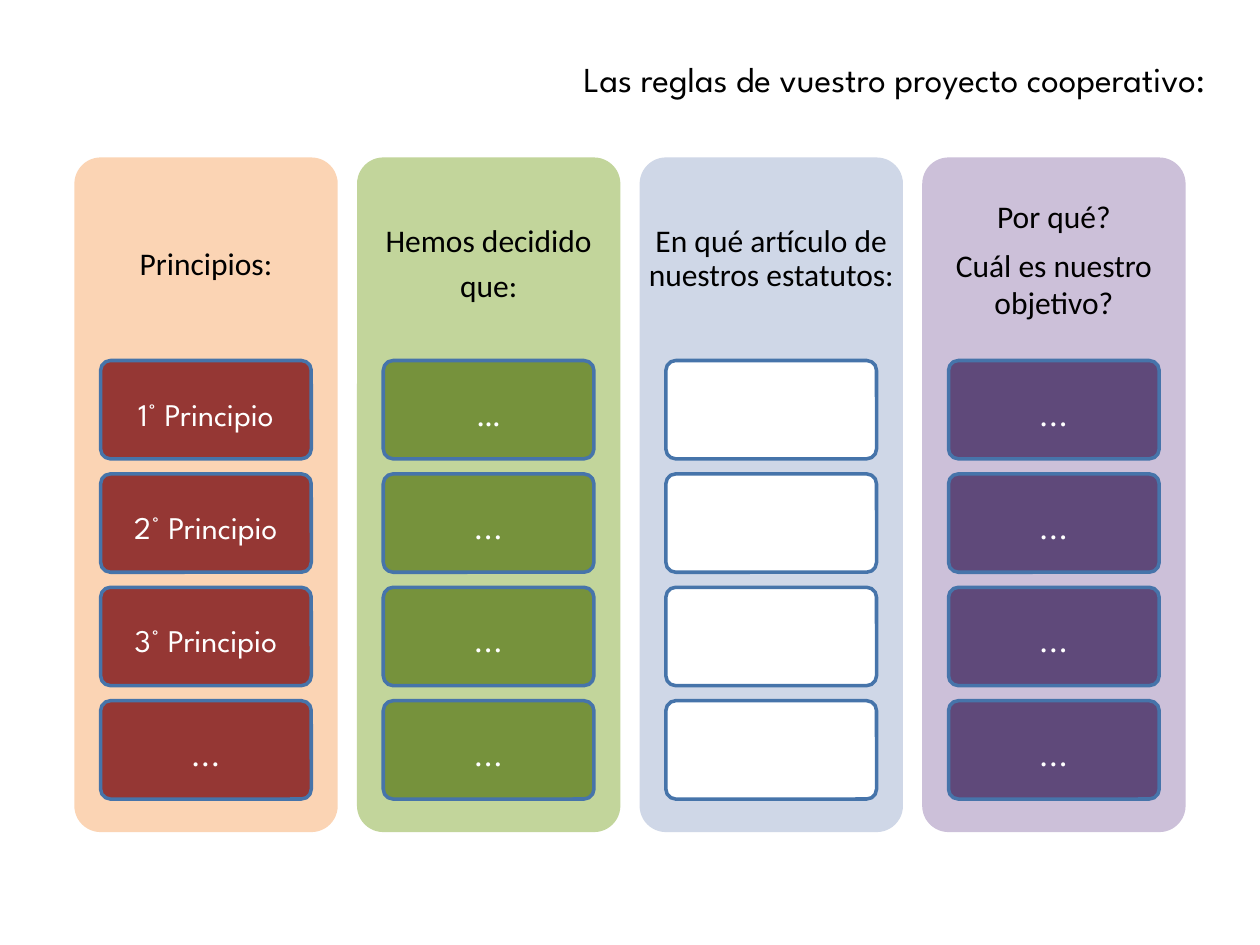
"""Build the slide with the rules of the cooperative project in four columns."""
from pptx import Presentation
from pptx.dml.color import RGBColor
from pptx.enum.shapes import MSO_SHAPE
from pptx.enum.text import MSO_ANCHOR, PP_ALIGN
from pptx.util import Pt

ROUNDED = MSO_SHAPE.ROUNDED_RECTANGLE
MIDDLE = MSO_ANCHOR.MIDDLE
CENTER, RIGHT = PP_ALIGN.CENTER, PP_ALIGN.RIGHT

BLACK = RGBColor(0x00, 0x00, 0x00)
WHITE = RGBColor(0xFF, 0xFF, 0xFF)
BLUE = RGBColor(0x46, 0x74, 0xAA)
PEACH = RGBColor(0xFB, 0xD4, 0xB4)
RED = RGBColor(0x95, 0x37, 0x34)
LIGHT_GREEN = RGBColor(0xC2, 0xD5, 0x9B)
GREEN = RGBColor(0x76, 0x92, 0x3C)
LIGHT_BLUE = RGBColor(0xCF, 0xD7, 0xE7)
LILAC = RGBColor(0xCC, 0xC0, 0xD9)
PURPLE = RGBColor(0x5F, 0x49, 0x7A)

HEAD_FONT, FONT = "Calibri", "League Spartan"
LEFT, TOP, WIDTH, HEIGHT, PITCH = 42.5, 90, 150.5, 385.5, 161.5
HEAD_HEIGHT = 116
CELL_INDENT, CELL_TOP, CELL_WIDTH, CELL_HEIGHT, CELL_PITCH = 15, 206, 120.4, 56.2, 64.8

COLUMNS = [
    (PEACH, RED, ["Principios:"], 1.2,
     ["1° Principio", "2° Principio", "3° Principio", "..."]),
    (LIGHT_GREEN, GREEN, ["Hemos decidido que:"], 1.2, ["…", "...", "...", "..."]),
    (LIGHT_BLUE, WHITE, ["En qué artículo de nuestros estatutos:"], 0.9, [""] * 4),
    (LILAC, PURPLE, ["Por qué?", "Cuál es nuestro objetivo?"], 1.0, ["..."] * 4),
]


class Deck:
    """Hold the slide and its style."""

    def __init__(self, prs):
        """Add a title-only slide."""
        self.slide = prs.slides.add_slide(prs.slide_layouts[5])

    def set_text(self, sp, lines, font, size, color, align, spacing, insets):
        """Fill a shape with formatted paragraphs."""
        tf = sp.text_frame
        tf.word_wrap = True
        tf.vertical_anchor = MIDDLE
        tf.margin_left, tf.margin_top, tf.margin_right, tf.margin_bottom = map(Pt, insets)
        tf.text = "\n".join(lines)
        for i, p in enumerate(tf.paragraphs):
            p.alignment = align
            p.line_spacing = spacing
            p.space_before = Pt(6.3 if i else 0)
            for r in p.runs:
                r.font.name, r.font.size = font, Pt(size)
                r.font.color.rgb = color

    def title(self, text):
        """Place the title along the top."""
        sp = self.slide.shapes.title
        sp.left, sp.top, sp.width, sp.height = Pt(0), Pt(0), Pt(720), Pt(90)
        self.set_text(sp, [text], FONT, 20, BLACK, RIGHT, 1.0, (7.2, 3.6, 31, 3.6))

    def panel(self, x, y, w, h, fill, line=None):
        """Add a rounded rectangle."""
        sp = self.slide.shapes.add_shape(ROUNDED, Pt(x), Pt(y), Pt(w), Pt(h))
        sp.adjustments[0] = 0.1
        sp.shadow.inherit = False
        sp.fill.solid()
        sp.fill.fore_color.rgb = fill
        if line is None:
            sp.line.fill.background()
        else:
            sp.line.color.rgb = line
            sp.line.width = Pt(2)
        return sp

    def heading(self, x, lines, spacing):
        """Add the heading of a column."""
        sp = self.slide.shapes.add_textbox(Pt(x), Pt(TOP), Pt(WIDTH), Pt(HEAD_HEIGHT))
        self.set_text(sp, lines, HEAD_FONT, 18, BLACK, CENTER, spacing, (5, 5, 5, 5))

    def cell(self, x, y, text, fill):
        """Add one outlined cell."""
        sp = self.panel(x, y, CELL_WIDTH, CELL_HEIGHT, fill, BLUE)
        if text:
            self.set_text(sp, [text], FONT, 18, WHITE, CENTER, 1.2, (3.6, 2.7, 3.6, 2.7))

    def column(self, x, back, fill, head, spacing, cells):
        """Add a column with its heading and cells."""
        self.panel(x, TOP, WIDTH, HEIGHT, back)
        self.heading(x, head, spacing)
        for row, text in enumerate(cells):
            self.cell(x + CELL_INDENT, CELL_TOP + row * CELL_PITCH, text, fill)


def main():
    """Build and save the presentation."""
    prs = Presentation()
    prs.slide_width, prs.slide_height = Pt(720), Pt(540)
    deck = Deck(prs)
    deck.title("Las reglas de vuestro proyecto cooperativo:")
    for i, column in enumerate(COLUMNS):
        deck.column(LEFT + i * PITCH, *column)
    prs.save("out.pptx")


if __name__ == "__main__":
    main()
